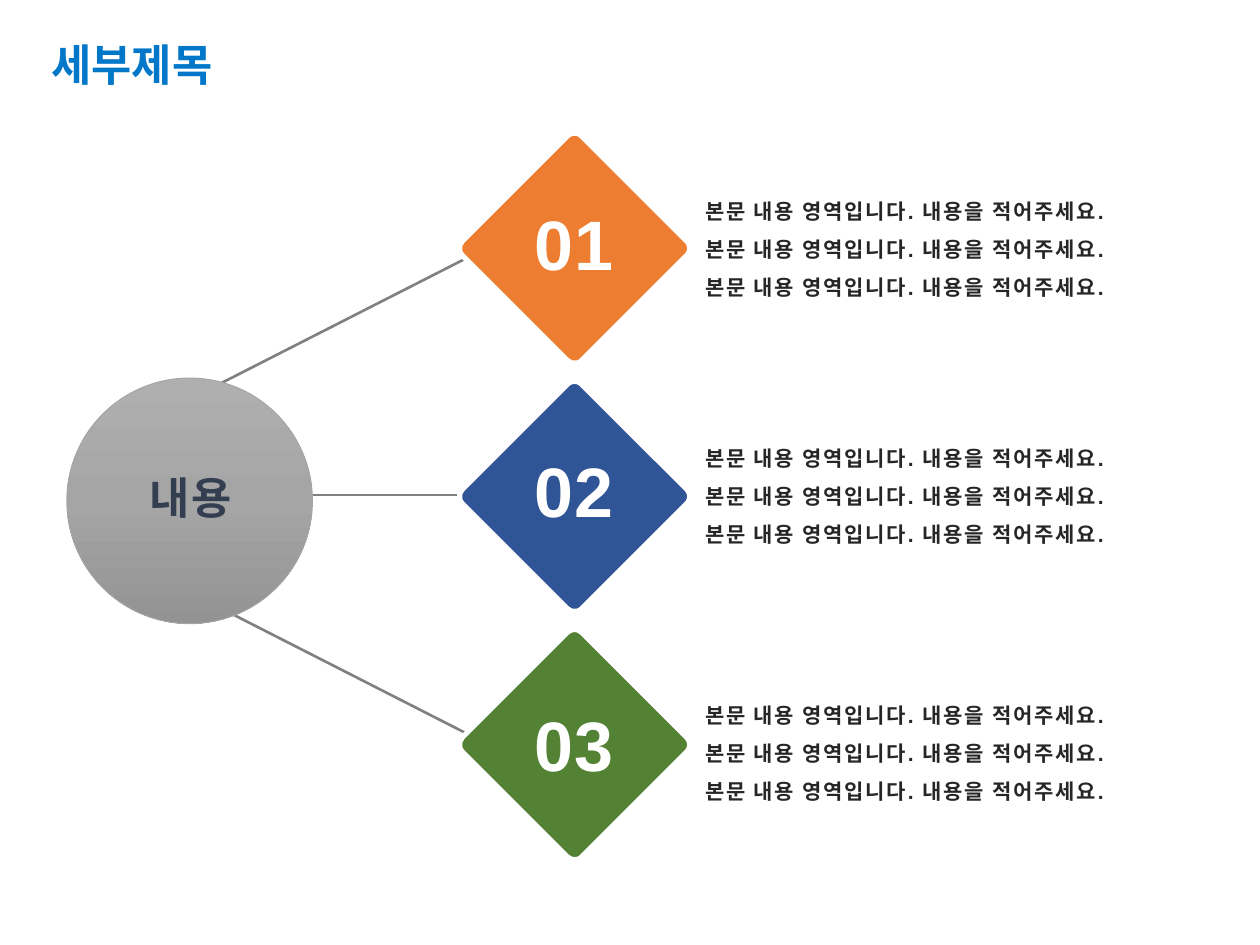
import copy

import lxml.etree
import pptx
import pptx.dml.color
import pptx.enum.shapes
import pptx.enum.text
import pptx.oxml.ns
import pptx.util

PX = 9144  # EMU in one px, 100 px to the inch
COLORS = {
    "title": "0077C8", "hub_text": "333F50", "body": "262626", "white": "FFFFFF",
    "spoke": "808080", "hub_line": "A5A5A5",
    "hub_top": "AFAFAF", "hub_middle": "A5A5A5", "hub_bottom": "939393",
    "orange": "ED7D31", "blue": "2F5597", "green": "548235",
}
HUB_STOPS = [(0, "hub_top"), (0.5, "hub_middle"), (1, "hub_bottom")]
BODY_LINES = ["본문 내용 영역입니다. 내용을 적어주세요."] * 3
# number, colour, offsets of the number and the body from the diamond's top
ITEMS = [("01", "orange", 24, 13), ("02", "blue", 23, 12), ("03", "green", 28, 19)]
ITEM_LEFT, ITEM_TOP, ITEM_SIZE, ITEM_PITCH = 389, 130, 134, 197
SPOKES = [(111, 337, 425, 177), (146, 393, 409, 393), (111, 450, 425, 610)]
ALIGN = pptx.enum.text.PP_ALIGN
SHAPES = pptx.enum.shapes.MSO_SHAPE


def px(*lengths):
    return [pptx.util.Emu(length * PX) for length in lengths]


def rgb(name):
    return pptx.dml.color.RGBColor.from_string(COLORS[name])


def style_font(font, size, color, family="Arial"):
    font.name = family
    font.size = pptx.util.Pt(size)
    font.bold = True
    font.color.rgb = rgb(color)


def set_line(line, color, width):
    line.color.rgb = rgb(color)
    line.width = pptx.util.Pt(width)


def add_text(page, box, lines, size, color, align=ALIGN.LEFT, spacing=None):
    """Adds a bold text box with letters set one point apart."""
    frame = page.shapes.add_textbox(*px(*box)).text_frame
    frame.word_wrap = True
    frame.auto_size = pptx.enum.text.MSO_AUTO_SIZE.SHAPE_TO_FIT_TEXT
    for index, line in enumerate(lines):
        para = frame.add_paragraph() if index else frame.paragraphs[0]
        para.alignment = align
        para.line_spacing = spacing
        span = para.add_run()
        span.text = line
        style_font(span.font, size, color)
        span.font._element.set("spc", "100")


def add_title(page, box):
    title = page.shapes.title
    title.left, title.top, title.width, title.height = px(*box)
    frame = title.text_frame
    frame.auto_size = pptx.enum.text.MSO_AUTO_SIZE.NONE
    frame.vertical_anchor = pptx.enum.text.MSO_ANCHOR.MIDDLE
    para = frame.paragraphs[0]
    para.alignment = ALIGN.LEFT
    para.line_spacing = 0.9
    span = para.add_run()
    span.text = "세부제목"
    style_font(span.font, 25, "title", "Calibri")


def add_spoke(page, ends):
    spoke = page.shapes.add_connector(
        pptx.enum.shapes.MSO_CONNECTOR.STRAIGHT, *px(*ends))
    set_line(spoke.line, "spoke", 1.5)
    lxml.etree.SubElement(spoke.element.spPr, pptx.oxml.ns.qn("a:effectLst"))


def add_hub(page, box):
    left, top, width, height = box
    hub = page.shapes.add_shape(SHAPES.OVAL, *px(*box))
    hub.shadow.inherit = False
    set_line(hub.line, "hub_line", 0.5)
    hub.fill.gradient()
    hub.fill.gradient_angle = 270
    stop_list = next(hub.element.iter(pptx.oxml.ns.qn("a:gsLst")))
    stop_list.insert(1, copy.deepcopy(stop_list[0]))
    for stop, (position, color) in zip(hub.fill.gradient_stops, HUB_STOPS):
        stop.position = position
        stop.color.rgb = rgb(color)
    add_text(page, (left + 12, top + 85, 172, 37), ["내용"], 25, "hub_text",
             ALIGN.CENTER, pptx.util.Pt(18))


def add_item(page, box, item):
    """Adds a numbered diamond with its body text on the right."""
    left, top, width, height = box
    number, color, number_drop, body_drop = item
    diamond = page.shapes.add_shape(SHAPES.ROUNDED_RECTANGLE, *px(*box))
    diamond.adjustments[0] = 0.06
    diamond.rotation = 315
    diamond.shadow.inherit = False
    diamond.fill.solid()
    diamond.fill.fore_color.rgb = rgb(color)
    set_line(diamond.line, "white", 3)
    add_text(page, (left - 37, top + number_drop, 207, 77), [number], 40, "white",
             ALIGN.CENTER)
    add_text(page, (left + 161, top + body_drop, 394, 101), BODY_LINES, 12, "body",
             spacing=1.5)


def main():
    deck = pptx.Presentation()
    deck.slide_width, deck.slide_height = px(1000, 750)
    page = deck.slides.add_slide(deck.slide_layouts.get_by_name("Title Only"))
    add_title(page, (31, 17, 849, 73))
    for ends in SPOKES:
        add_spoke(page, ends)
    add_hub(page, (53, 300, 195, 195))
    for row, item in enumerate(ITEMS):
        top = ITEM_TOP + row * ITEM_PITCH
        add_item(page, (ITEM_LEFT, top, ITEM_SIZE, ITEM_SIZE), item)
    deck.save("out.pptx")


if __name__ == "__main__":
    main()
